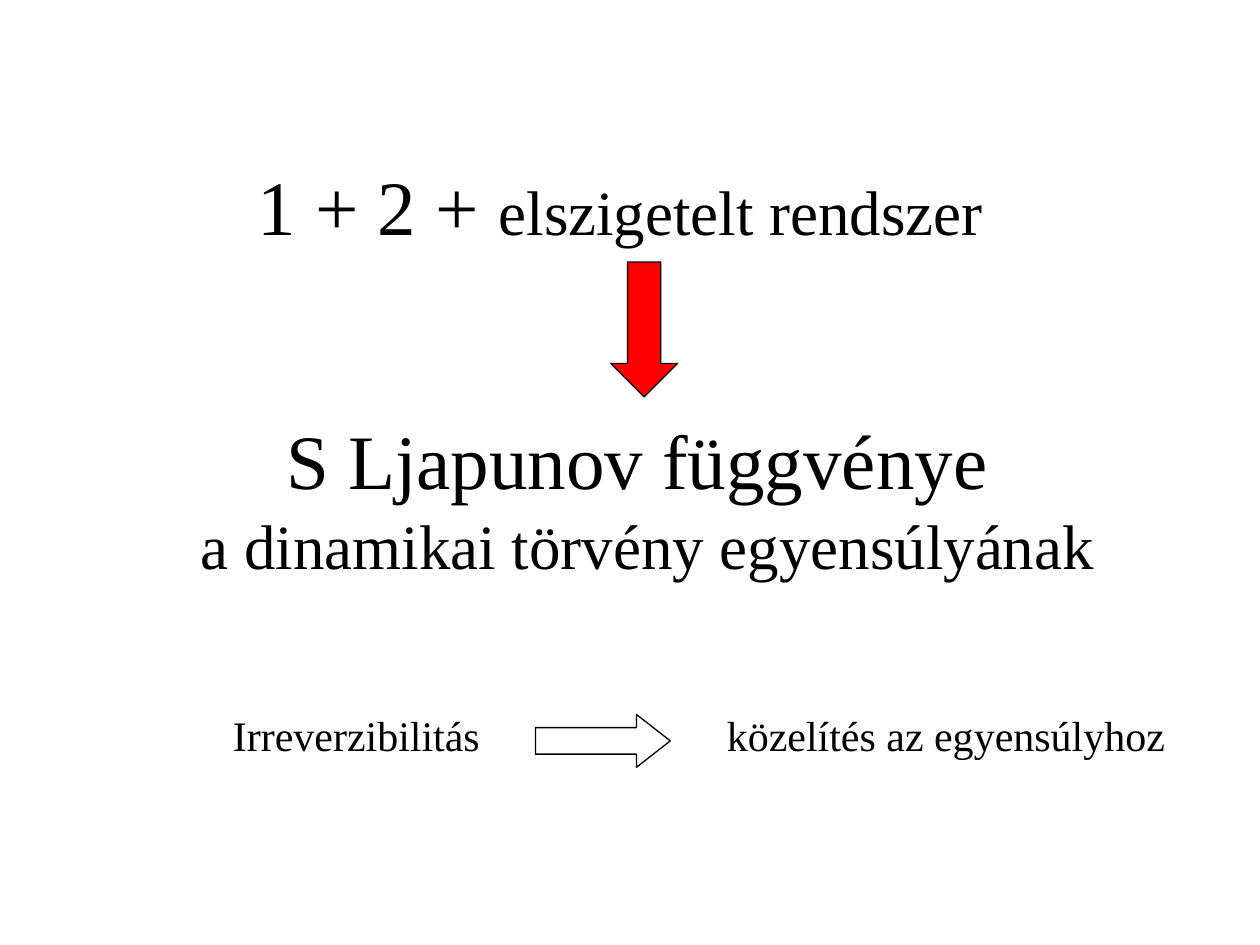
from pptx import Presentation
from pptx.dml.color import RGBColor
from pptx.enum.shapes import MSO_SHAPE
from pptx.enum.text import MSO_ANCHOR, MSO_AUTO_SIZE, PP_ALIGN
from pptx.util import Inches, Pt

DOWN, RIGHT = MSO_SHAPE.DOWN_ARROW, MSO_SHAPE.RIGHT_ARROW
MIDDLE, CENTER, LEFT = MSO_ANCHOR.MIDDLE, PP_ALIGN.CENTER, PP_ALIGN.LEFT
FIT = MSO_AUTO_SIZE.SHAPE_TO_FIT_TEXT
BLACK = RGBColor(0, 0, 0)
RED = RGBColor(255, 0, 0)
WHITE = RGBColor(255, 255, 255)
FONT = "Times New Roman"
BIG, MID, SMALL = 44, 36, 24


def place(shape, box):
    shape.left, shape.top, shape.width, shape.height = map(Inches, box)


def write(par, runs, align):
    """Fill a paragraph with (text, size) runs."""
    par.alignment = align
    par.font.name = FONT
    par.font.color.rgb = BLACK
    for text, size in runs:
        run = par.add_run()
        run.text = text
        run.font.size = Pt(size)


def add_title(slide, box):
    title = slide.shapes.title
    place(title, box)
    frame = title.text_frame
    frame.vertical_anchor = MIDDLE
    write(frame.paragraphs[0],
          [("1 + 2 + ", BIG), ("elszigetelt rendszer", MID), (" ", BIG)],
          CENTER)


def add_label(slide, box, lines, align=LEFT):
    """Add an unwrapped text box; its lines share one paragraph."""
    frame = slide.shapes.add_textbox(*map(Inches, box)).text_frame
    frame.word_wrap = False
    frame.auto_size = FIT
    par = frame.paragraphs[0]
    for row, runs in enumerate(lines):
        if row:
            par.add_line_break()
        write(par, runs, align)


def add_arrow(slide, kind, box, fill, head):
    """Add a block arrow whose head is a share of its short side."""
    arrow = slide.shapes.add_shape(kind, *map(Inches, box))
    arrow.shadow.inherit = False
    arrow.adjustments[0] = 0.5
    arrow.adjustments[1] = head
    arrow.fill.solid()
    arrow.fill.fore_color.rgb = fill
    arrow.line.color.rgb = BLACK
    arrow.line.width = Pt(0.75)


def add_claim(slide, x, y, w, h):
    """Arrow from the title down to the centred statement."""
    add_arrow(slide, DOWN, (x + 0.46 * w, y, 0.53, 1.07), RED, 0.5)
    text = [[("S Ljapunov függvénye", BIG), (" ", 48)],
            [("a dinamikai törvény egyensúlyának", MID)]]
    add_label(slide, (x, y + h - 1.5, w, 1.5), text, CENTER)


def add_result(slide, x, y, w, h):
    """Cause on the left, arrow, effect on the right."""
    cause, effect = 2.24, 3.68
    add_label(slide, (x, y, cause, h), [[("Irreverzibilitás", SMALL)]])
    add_arrow(slide, RIGHT, (x + 2.5, y + 0.09, 1.07, 0.42), WHITE, 0.64)
    add_label(slide, (x + w - effect, y, effect, h),
              [[("közelítés az egyensúlyhoz", SMALL)]])


def main():
    deck = Presentation()
    deck.slide_width, deck.slide_height = Inches(10), Inches(7.5)
    slide = deck.slides.add_slide(deck.slide_layouts[5])
    add_title(slide, (0.75, 1, 8.5, 1.25))
    add_claim(slide, 1.49, 2.08, 7.3, 2.59)
    add_result(slide, 1.75, 5.58, 7.6, 0.5)
    deck.save("out.pptx")


if __name__ == "__main__":
    main()
